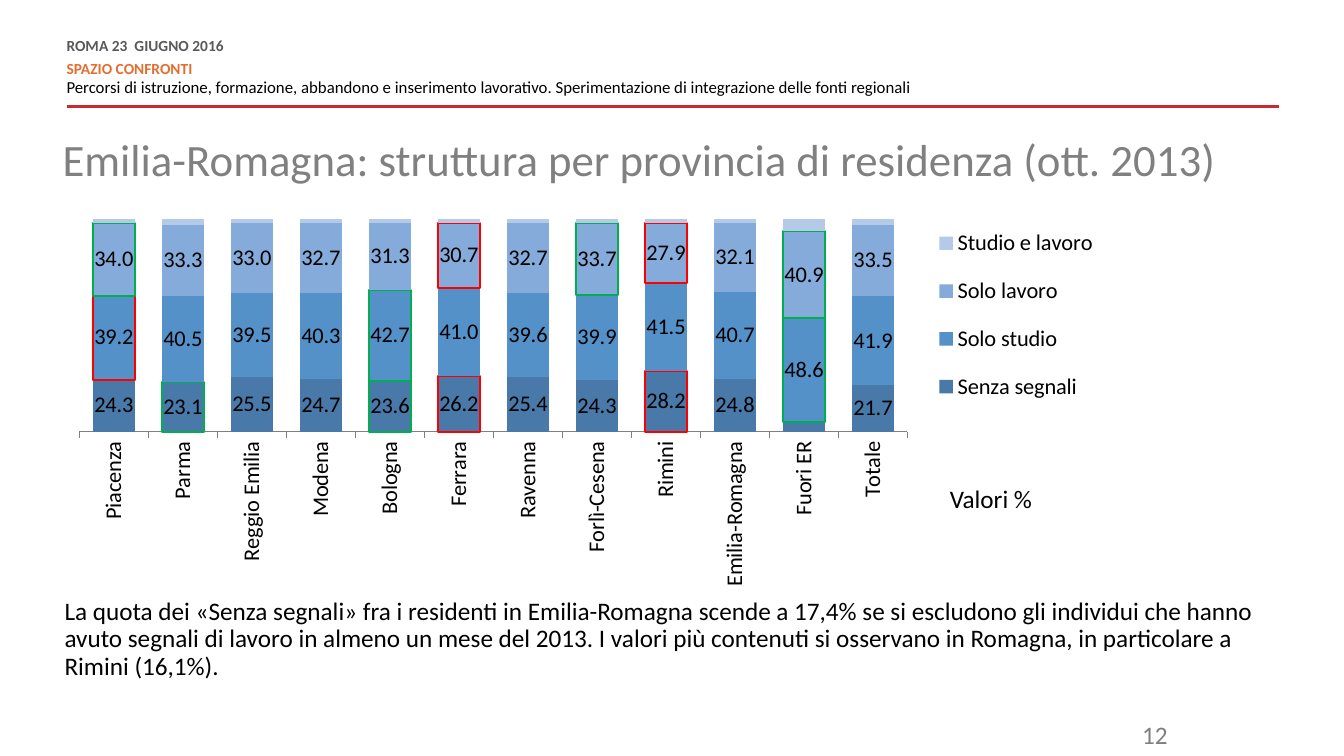
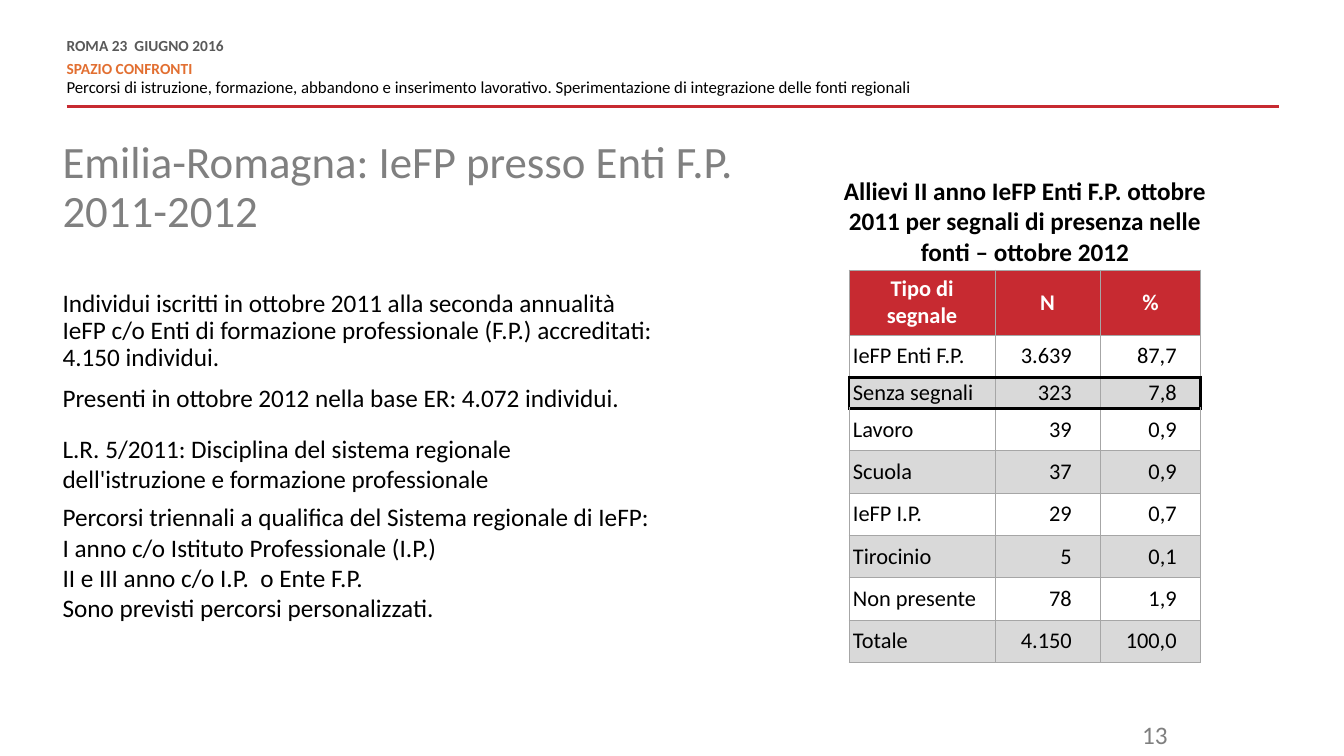
from lxml import etree
from pptx import Presentation
from pptx.chart.data import CategoryChartData
from pptx.dml.color import RGBColor
from pptx.enum.chart import XL_CHART_TYPE, XL_LABEL_POSITION, XL_LEGEND_POSITION, XL_TICK_MARK
from pptx.enum.shapes import MSO_CONNECTOR
from pptx.enum.text import MSO_ANCHOR, MSO_AUTO_SIZE, PP_ALIGN
from pptx.oxml.ns import qn
from pptx.util import Inches, Pt

LEFT, CENTER, RIGHT = PP_ALIGN.LEFT, PP_ALIGN.CENTER, PP_ALIGN.RIGHT
TOP, MIDDLE = MSO_ANCHOR.TOP, MSO_ANCHOR.MIDDLE
STACKED_100 = XL_CHART_TYPE.COLUMN_STACKED_100
LABEL_CENTER = XL_LABEL_POSITION.CENTER
LEGEND_RIGHT = XL_LEGEND_POSITION.RIGHT
TICK_OUTSIDE = XL_TICK_MARK.OUTSIDE

FONT = "Calibri"
BLACK = RGBColor(0x00, 0x00, 0x00)
WHITE = RGBColor(0xFF, 0xFF, 0xFF)
RED = RGBColor(0xC7, 0x2A, 0x31)
ORANGE = RGBColor(0xE2, 0x6F, 0x31)
DARK_GREY = RGBColor(0x59, 0x59, 0x59)
TITLE_GREY = RGBColor(0x80, 0x80, 0x80)
NUMBER_GREY = RGBColor(0x7F, 0x7F, 0x7F)
BORDER_GREY = RGBColor(0xA6, 0xA6, 0xA6)
BAND_GREY = RGBColor(0xD9, 0xD9, 0xD9)
HIGH = RGBColor(0x00, 0xB0, 0x50)
LOW = RGBColor(0xFF, 0x00, 0x00)
SERIES_COLORS = [
    RGBColor(0x48, 0x79, 0xA9),
    RGBColor(0x55, 0x91, 0xC9),
    RGBColor(0x85, 0xAB, 0xDB),
    RGBColor(0xB5, 0xC9, 0xE8),
]

PROVINCES = ["Piacenza", "Parma", "Reggio Emilia", "Modena", "Bologna", "Ferrara",
             "Ravenna", "Forlì-Cesena", "Rimini", "Emilia-Romagna", "Fuori ER", "Totale"]
# Name, values, outlined provinces
SERIES = [
    ("Senza segnali",
     [24.3, 23.1, 25.5, 24.7, 23.6, 26.2, 25.4, 24.3, 28.2, 24.8, 4.6, 21.7],
     {"Parma": HIGH, "Bologna": HIGH, "Ferrara": LOW, "Rimini": LOW}),
    ("Solo studio",
     [39.2, 40.5, 39.5, 40.3, 42.7, 41, 39.6, 39.9, 41.5, 40.7, 48.6, 41.9],
     {"Piacenza": LOW, "Bologna": HIGH, "Fuori ER": HIGH}),
    ("Solo lavoro",
     [34, 33.3, 33, 32.7, 31.3, 30.7, 32.7, 33.7, 27.9, 32.1, 40.9, 33.5],
     {"Piacenza": HIGH, "Ferrara": LOW, "Forlì-Cesena": HIGH, "Rimini": LOW,
      "Fuori ER": HIGH}),
    ("Studio e lavoro", [2, 3, 2, 2, 2, 2, 2, 2, 2, 2, 6, 3], {}),
]
NUMBER_FORMAT = "#,##0.0"

SIGNAL_ROWS = [
    ("Tipo di segnale", "N", "%"),
    ("IeFP Enti F.P.", "3.639", "87,7"),
    ("Senza segnali", "323", "7,8"),
    ("Lavoro", "39", "0,9"),
    ("Scuola", "37", "0,9"),
    ("IeFP I.P.", "29", "0,7"),
    ("Tirocinio", "5", "0,1"),
    ("Non presente", "78", "1,9"),
    ("Totale", "4.150", "100,0"),
]
HIGHLIGHT_ROW = 2


def set_font(font, size, color, bold=False):
    font.name, font.size, font.bold = FONT, Pt(size), bold
    font.color.rgb = color


def fill_text(shape, paragraphs, size=18, color=BLACK, bold=False, align=LEFT, inset=0.0):
    """Write (text, line spacing, space before) paragraphs without bullets."""
    frame = shape.text_frame
    frame.word_wrap = True
    frame.auto_size = MSO_AUTO_SIZE.NONE
    frame.vertical_anchor = TOP
    frame.margin_left = frame.margin_right = Inches(inset)
    frame.margin_top = frame.margin_bottom = Inches(inset / 2)
    for index, (text, spacing, before) in enumerate(paragraphs):
        paragraph = frame.paragraphs[0] if index == 0 else frame.add_paragraph()
        paragraph.text = text
        if shape.is_placeholder:
            properties = paragraph._p.get_or_add_pPr()
            properties.set("marL", "0")
            properties.set("indent", "0")
            etree.SubElement(properties, qn("a:buNone"))
        paragraph.alignment = align
        paragraph.line_spacing = spacing
        paragraph.space_before = Pt(before)
        set_font(paragraph.font, size, color, bold)
    return frame


def place(shape, box):
    shape.left, shape.top, shape.width, shape.height = (Inches(value) for value in box)


def add_text(slide, box, text, **style):
    shape = slide.shapes.add_textbox(*(Inches(value) for value in box))
    return fill_text(shape, [(text, 1.0, 0)], **style)


def add_header(slide, left=0.66, top=0.39, right=12.69):
    """Event, section and subject above a red rule."""
    shape = slide.shapes.add_textbox(Inches(left), Inches(top), Inches(8.48), Inches(0.59))
    line = Pt(10.8)
    frame = fill_text(shape, [
        ("ROMA 23  GIUGNO 2016", line, 0),
        ("SPAZIO CONFRONTI", line, 0),
        ("Percorsi di istruzione, formazione, abbandono e inserimento lavorativo. "
         "Sperimentazione di integrazione delle fonti regionali", line, 3),
    ])
    event, section, subject = frame.paragraphs
    set_font(event.font, 11, DARK_GREY, True)
    set_font(section.font, 11, ORANGE, True)
    set_font(subject.font, 12, BLACK)
    event.space_after = Pt(6)

    rule_top = Inches(top + 0.67)
    rule = slide.shapes.add_connector(
        MSO_CONNECTOR.STRAIGHT, Inches(left), rule_top, Inches(right), rule_top)
    rule.line.color.rgb = RED
    rule.line.width = Pt(2)
    etree.SubElement(rule._element.spPr, qn("a:effectLst"))


def add_content_slide(presentation, number, title, title_box, body, body_box, body_inset=0.0):
    """Slide with the shared header, title, body and page number."""
    slide = presentation.slides.add_slide(presentation.slide_layouts[1])
    add_header(slide)
    place(slide.shapes.title, title_box)
    fill_text(slide.shapes.title, [(title, 0.9, 0)], size=32, color=TITLE_GREY)
    body_shape = slide.placeholders[1]
    place(body_shape, body_box)
    fill_text(body_shape, body, inset=body_inset)
    add_text(slide, (10.5, 7.09, 1.18, 0.35), str(number),
             color=NUMBER_GREY, align=RIGHT, inset=0.1)
    return slide


def set_layout(parent, position, x, y, width, height, inner=False):
    """Give a chart part a fixed place, as fractions of the chart."""
    for old in parent.findall(qn("c:layout")):
        parent.remove(old)
    layout = etree.Element(qn("c:layout"))
    manual = etree.SubElement(layout, qn("c:manualLayout"))
    settings = [("layoutTarget", "inner")] if inner else []
    settings += [("xMode", "edge"), ("yMode", "edge"),
                 ("x", x), ("y", y), ("w", width), ("h", height)]
    for name, value in settings:
        etree.SubElement(manual, qn("c:" + name)).set("val", str(value))
    parent.insert(position, layout)


def hide_label(labels, point_index):
    label = etree.Element(qn("c:dLbl"))
    etree.SubElement(label, qn("c:idx")).set("val", str(point_index))
    etree.SubElement(label, qn("c:delete")).set("val", "1")
    labels._element.insert(0, label)


def add_province_chart(slide, box):
    data = CategoryChartData(number_format=NUMBER_FORMAT)
    data.categories = PROVINCES
    for name, values, _ in SERIES:
        data.add_series(name, values)
    chart = slide.shapes.add_chart(
        STACKED_100, *(Inches(value) for value in box), data).chart
    chart.has_title = False
    set_font(chart.font, 16, BLACK)

    # Axes
    chart.value_axis.visible = False
    chart.value_axis.has_major_gridlines = False
    axis = chart.category_axis
    axis.major_tick_mark = TICK_OUTSIDE
    axis.format.line.color.rgb = TITLE_GREY
    set_font(axis.tick_labels.font, 16, BLACK)
    axis._element.find(qn("c:txPr")).find(qn("a:bodyPr")).set("rot", "-5400000")

    # Columns, outlined extremes and labels
    plot = chart.plots[0]
    plot.gap_width, plot.overlap = 63, 100
    plot.vary_by_categories = False
    for series, color, (name, _, outlines) in zip(plot.series, SERIES_COLORS, SERIES):
        series.format.fill.solid()
        series.format.fill.fore_color.rgb = color
        for province, outline in outlines.items():
            point_format = series.points[PROVINCES.index(province)].format
            point_format.fill.solid()
            point_format.fill.fore_color.rgb = color
            point_format.line.color.rgb = outline
            point_format.line.width = Pt(1.5)
        if name != "Studio e lavoro":
            labels = series.data_labels
            labels.show_value = True
            labels.number_format = NUMBER_FORMAT
            labels.number_format_is_linked = False
            labels.position = LABEL_CENTER
            set_font(labels.font, 16, BLACK)
    hide_label(plot.series[0].data_labels, PROVINCES.index("Fuori ER"))

    # Legend and plot area
    chart.has_legend = True
    chart.legend.position = LEGEND_RIGHT
    chart.legend.include_in_layout = False
    set_font(chart.legend.font, 16, BLACK)
    set_layout(chart.legend._element, 1, 0.82, 0.04, 0.17, 0.51)
    plot_area = chart._chartSpace.chart.plotArea
    set_layout(plot_area, 0, 0.016, 0.063, 0.786, 0.513, inner=True)


def set_borders(cell, edges):
    """Draw left, right, top and bottom borders given as (colour, points)."""
    properties = cell._tc.get_or_add_tcPr()
    for position, (side, (color, width)) in enumerate(zip("LRTB", edges)):
        line = etree.Element(qn("a:ln" + side))
        line.set("w", str(Pt(width)))
        fill = etree.SubElement(line, qn("a:solidFill"))
        etree.SubElement(fill, qn("a:srgbClr")).set("val", str(color))
        properties.insert(position, line)


def add_signal_table(slide, left, top):
    """Signals by type, with one row framed in black."""
    widths = (1.45, 1.04, 1.0)
    heights = [0.62] + [0.42] * (len(SIGNAL_ROWS) - 1)
    heights[HIGHLIGHT_ROW] = 0.31
    margins = ((0.04, 0), (0, 0.28), (0, 0.24))
    thin, thick = (BORDER_GREY, 0.75), (BLACK, 2.25)
    last = len(widths) - 1
    table = slide.shapes.add_table(
        len(heights), len(widths), Inches(left), Inches(top),
        Inches(sum(widths)), Inches(sum(heights))).table
    table.first_row = table.horz_banding = False
    for column, width in zip(table.columns, widths):
        column.width = Inches(width)
    for row_index, (row, height) in enumerate(zip(SIGNAL_ROWS, heights)):
        table.rows[row_index].height = Inches(height)
        header = row_index == 0
        framed = row_index == HIGHLIGHT_ROW
        band = WHITE if row_index % 2 else BAND_GREY
        for column_index, text in enumerate(row):
            cell = table.cell(row_index, column_index)
            cell.vertical_anchor = MIDDLE
            if not header:
                before, after = margins[column_index]
                cell.margin_left, cell.margin_right = Inches(before), Inches(after)
                cell.margin_top = cell.margin_bottom = 0
            cell.fill.solid()
            cell.fill.fore_color.rgb = RED if header else band
            paragraph = cell.text_frame.paragraphs[0]
            paragraph.text = text
            paragraph.alignment = CENTER if header else RIGHT if column_index else LEFT
            set_font(paragraph.font, 16, WHITE if header else BLACK, header)
            set_borders(cell, (
                thick if framed and column_index == 0 else thin,
                thick if framed and column_index == last else thin,
                thick if row_index in (HIGHLIGHT_ROW, HIGHLIGHT_ROW + 1) else thin,
                thick if row_index in (HIGHLIGHT_ROW - 1, HIGHLIGHT_ROW) else thin))


def build_province_slide(presentation):
    slide = add_content_slide(
        presentation, 12,
        "Emilia-Romagna: struttura per provincia di residenza (ott. 2013)",
        (0.62, 1.37, 12.09, 0.63),
        [("La quota dei «Senza segnali» fra i residenti in Emilia-Romagna scende a 17,4% se si "
          "escludono gli individui che hanno avuto segnali di lavoro in almeno un mese del 2013. "
          "I valori più contenuti si osservano in Romagna, in particolare a Rimini (16,1%).",
          0.9, 0)],
        (0.54, 5.89, 12.17, 0.92), body_inset=0.1)
    add_province_chart(slide, (0.62, 1.91, 10.45, 4.12))
    add_text(slide, (9.42, 4.79, 1.39, 0.3), "Valori %")


def build_training_slide(presentation):
    slide = add_content_slide(
        presentation, 13, "Emilia-Romagna: IeFP presso Enti F.P. 2011-2012",
        (0.62, 1.39, 6.74, 1.13),
        [("Individui iscritti in ottobre 2011 alla seconda annualità IeFP c/o Enti di "
          "formazione professionale (F.P.) accreditati: 4.150 individui.", 0.9, 0),
         ("Presenti in ottobre 2012 nella base ER: 4.072 individui.", 0.9, 10),
         ("L.R. 5/2011: Disciplina del sistema regionale dell'istruzione e formazione "
          "professionale", 1.0, 14),
         ("Percorsi triennali a qualifica del Sistema regionale di IeFP:", 1.0, 6),
         ("I anno c/o Istituto Professionale (I.P.)", 1.0, 0),
         ("II e III anno c/o I.P.  o Ente F.P.", 1.0, 0),
         ("Sono previsti percorsi personalizzati.", 1.0, 0)],
        (0.62, 2.88, 5.87, 3.34))
    add_text(slide, (8.32, 1.74, 3.69, 0.91),
             "Allievi II anno IeFP Enti F.P. ottobre 2011 per segnali di presenza nelle "
             "fonti – ottobre 2012", bold=True, align=CENTER)
    add_signal_table(slide, 8.42, 2.68)


def main():
    presentation = Presentation()
    presentation.slide_width, presentation.slide_height = Inches(13.33), Inches(7.5)
    build_province_slide(presentation)
    build_training_slide(presentation)
    presentation.save("out.pptx")


if __name__ == "__main__":
    main()
